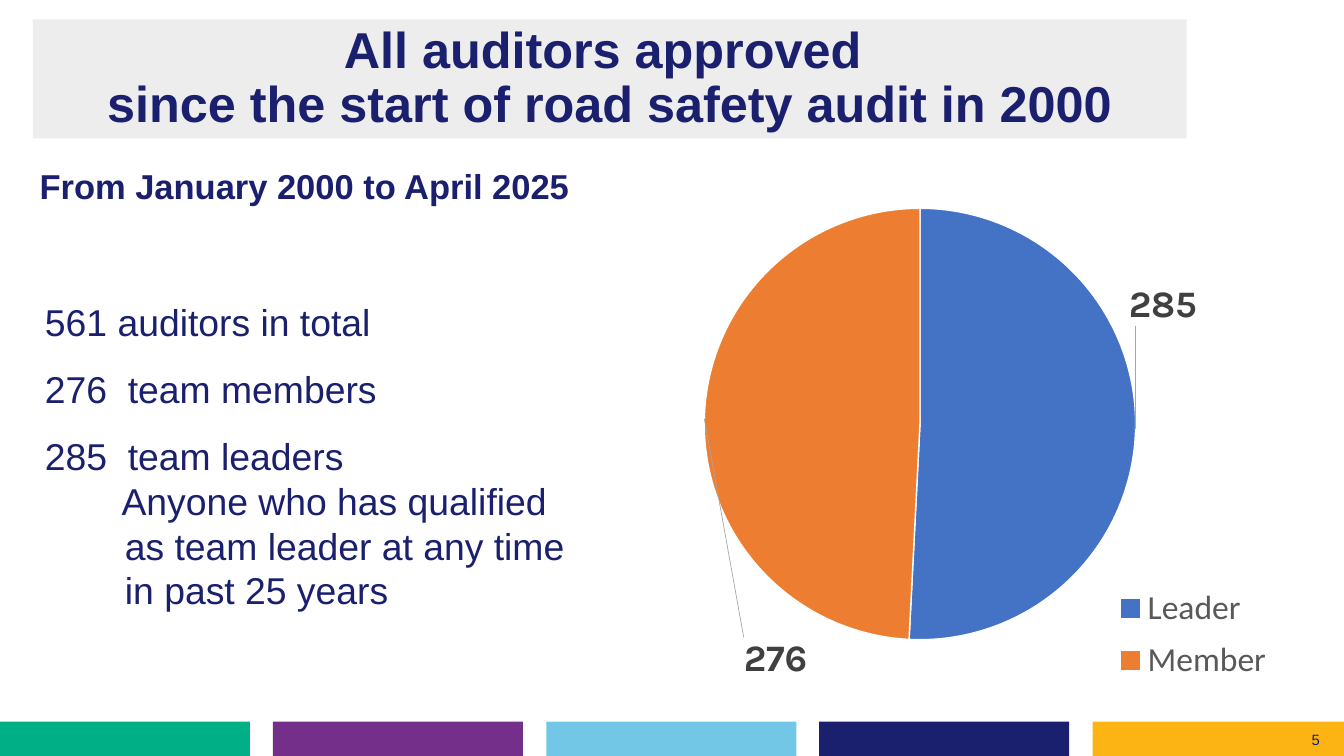
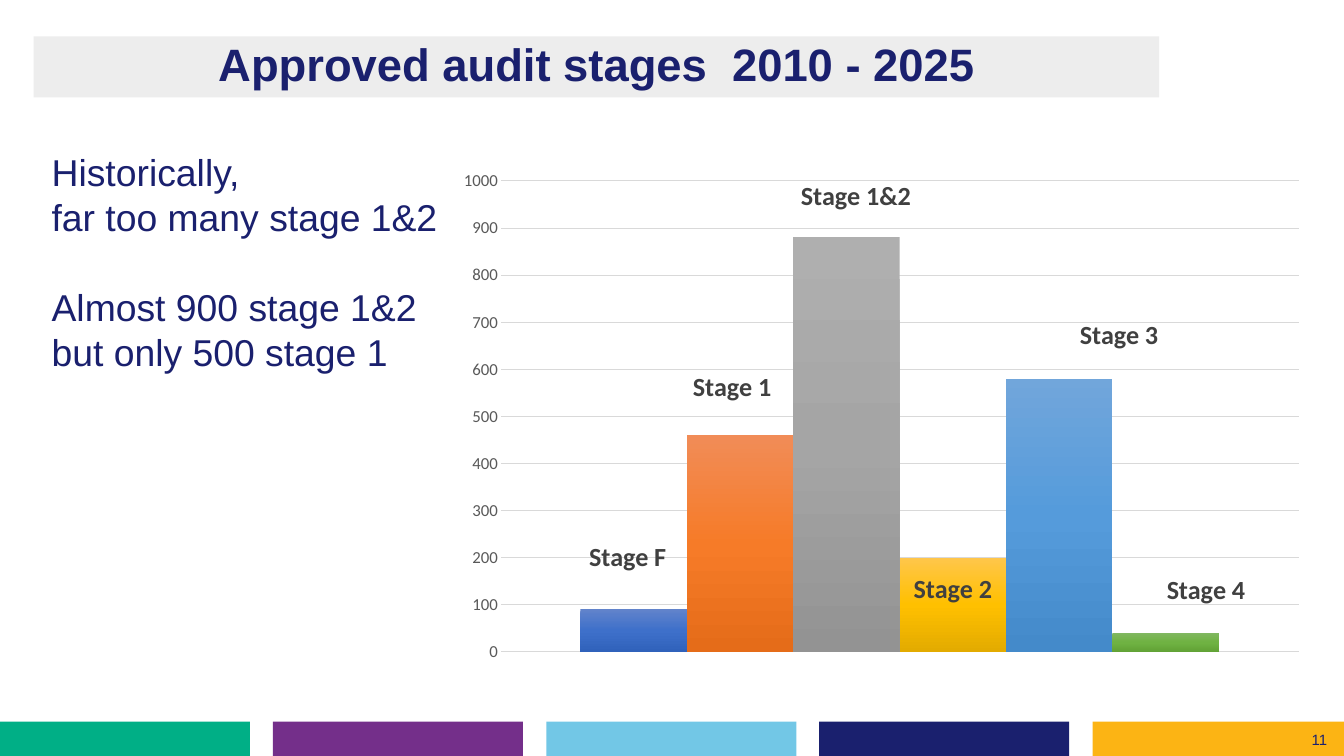
from dataclasses import dataclass

from lxml import etree
from pptx import Presentation
from pptx import util as u
from pptx.chart.data import CategoryChartData
from pptx.dml.color import RGBColor
from pptx.enum import chart as charts, shapes, text
from pptx.oxml.ns import qn

PX = 9144  # EMU per px, 100 px to the inch
SLIDE_BOX = (0, 0, 2000, 1125)


@dataclass(frozen=True)
class Theme:
    navy: str = "1A206E"
    band: str = "EDEDED"
    white: str = "FFFFFF"
    label: str = "404040"
    axis: str = "595959"
    grid: str = "D9D9D9"
    leader: str = "A6A6A6"
    footer: tuple = ("00AF86", "742F8A", "72C7E6", "1A206E", "FCB414")
    slices: tuple = ("4472C4", "ED7D31")
    font: str = "Arial"
    chart_font: str = "Calibri"
    pie_label_font: str = "Karla"
    title_size: float = 54
    short_title_size: float = 48.6
    body_size: float = 40
    subtitle_size: float = 37
    legend_size: float = 36
    pie_label_size: float = 40
    bar_label_size: float = 28
    axis_size: float = 18
    number_size: float = 16


THEME = Theme()

# Stage name, count, gradient from top to bottom, label shift in px
STAGES = [
    ("Stage F", 90, ("6183CB", "3E70CA", "3062BB"), (-9, -49)),
    ("Stage 1", 460, ("F18C57", "F67B28", "E56C19"), (-12, -43)),
    ("Stage 1&2", 880, ("AFAFAF", "A5A5A5", "939393"), (14, -33)),
    ("Stage 2", 200, ("FFC64B", "FFC000", "E3AB00"), (0, 76)),
    ("Stage 3", 580, ("71A6DB", "559BDB", "448ACA"), (89, -36)),
    ("Stage 4", 40, ("81B861", "6FB242", "62A336"), (60, -35)),
]


# Shared helpers
def emu(box):
    return [u.Emu(length * PX) for length in box]


def style_font(font, size, color=THEME.navy, bold=False, name=THEME.font):
    font.name, font.size, font.bold = name, u.Pt(size), bold
    font.color.rgb = RGBColor.from_string(color)


def set_fill(shape, color):
    shape.fill.solid()
    shape.fill.fore_color.rgb = RGBColor.from_string(color)


def set_frame(frame, anchor=text.MSO_ANCHOR.MIDDLE):
    frame.word_wrap = True
    frame.auto_size = text.MSO_AUTO_SIZE.NONE
    frame.vertical_anchor = anchor
    frame.margin_left = frame.margin_right = u.Emu(10 * PX)
    frame.margin_top = frame.margin_bottom = 0


def add_text(slide, box, lines, size, bold=False, spacing=1.0,
             anchor=text.MSO_ANCHOR.MIDDLE):
    frame = slide.shapes.add_textbox(*emu(box)).text_frame
    set_frame(frame, anchor)
    frame.text = "\n".join(lines)
    for paragraph in frame.paragraphs:
        paragraph.line_spacing = spacing
        for run in paragraph.runs:
            style_font(run.font, size, bold=bold)
    return frame.paragraphs


def set_indent(paragraph, left, first):
    properties = paragraph._p.get_or_add_pPr()
    properties.set("marL", str(left * PX))
    properties.set("indent", str(first * PX))


# Parts on every slide
def add_footer(slide, box, number):
    left, top, width, height = box
    strip_top = top + height - 51
    for index, color in enumerate(THEME.footer):
        start = round(index * 406.4)
        strip_width = 372 if index < 4 else width - start
        strip = slide.shapes.add_shape(
            shapes.MSO_SHAPE.RECTANGLE,
            *emu((left + start, strip_top, strip_width, 51)))
        strip.shadow.inherit = False
        set_fill(strip, color)
        strip.line.fill.background()
    add_text(slide, (left + width - 58, strip_top + 8, 54, 38), [number],
             THEME.number_size)


def add_title(slide, box, wording, size):
    title = slide.shapes.title
    title.left, title.top, title.width, title.height = emu(box)
    set_fill(title, THEME.band)
    set_frame(title.text_frame)
    title.text_frame.text = wording
    paragraph = title.text_frame.paragraphs[0]
    paragraph.alignment = text.PP_ALIGN.CENTER
    paragraph.line_spacing = 0.9
    for run in paragraph.runs:
        style_font(run.font, size, bold=True)


def new_slide(presentation, title_box, title, size, number):
    slide = presentation.slides.add_slide(presentation.slide_layouts[5])
    add_footer(slide, SLIDE_BOX, number)
    add_title(slide, title_box, title, size)
    return slide


# Chart helpers
def set_layout(parent, position, values):
    for old in parent.findall(qn("c:layout")):
        parent.remove(old)
    layout = etree.Element(qn("c:layout"))
    manual = etree.SubElement(layout, qn("c:manualLayout"))
    for tag, value in values.items():
        etree.SubElement(manual, qn("c:" + tag)).set("val", str(value))
    parent.insert(position, layout)


def place_part(parent, position, chart_box, part_box, inner=False):
    """Place a plot or legend by px from the corner of its chart."""
    values = {"layoutTarget": "inner"} if inner else {}
    values.update(xMode="edge", yMode="edge")
    sizes = chart_box[2:] * 2
    values.update(zip("xywh", (a / b for a, b in zip(part_box, sizes))))
    set_layout(parent, position, values)


def place_plot(chart, chart_box, plot_box):
    area = chart._chartSpace.find(".//" + qn("c:plotArea"))
    place_part(area, 0, chart_box, plot_box, inner=True)


def add_chart(slide, box, kind, data):
    chart = slide.shapes.add_chart(kind, *emu(box), data).chart
    chart.has_title = False
    chart.has_legend = False
    chart.font.name = THEME.chart_font
    chart.font.size = u.Pt(10)
    return chart


def add_label(series, index, box, shift, size, name, show_series=False):
    label = series.points[index].data_label
    label.position = charts.XL_LABEL_POSITION.OUTSIDE_END
    style_font(label.font, size, THEME.label, True, name)
    element = series._element.findall(".//" + qn("c:dLbl"))[index]
    set_layout(element, 1, {"x": shift[0] / box[2], "y": shift[1] / box[3]})
    element.find(qn("c:showVal")).set("val", str(int(not show_series)))
    element.find(qn("c:showSerName")).set("val", str(int(show_series)))


def set_leader_lines(series, color=None):
    labels = series._element.find(qn("c:dLbls"))
    for old in labels.findall(qn("c:showLeaderLines")):
        labels.remove(old)
    show = etree.SubElement(labels, qn("c:showLeaderLines"))
    show.set("val", "1" if color else "0")
    if color:
        leader = etree.SubElement(labels, qn("c:leaderLines"))
        properties = etree.SubElement(leader, qn("c:spPr"))
        line = etree.SubElement(properties, qn("a:ln"), w=str(u.Pt(0.75)))
        fill = etree.SubElement(line, qn("a:solidFill"))
        etree.SubElement(fill, qn("a:srgbClr"), val=color)


def set_gradient(series, colors):
    fill = series.format.fill
    fill.gradient()
    fill.gradient_angle = 270
    stops = series._element.find(".//" + qn("a:gsLst"))
    for stop in list(stops):
        stops.remove(stop)
    for index, color in enumerate(colors):
        stop = etree.SubElement(stops, qn("a:gs"), pos=str(index * 50000))
        etree.SubElement(stop, qn("a:srgbClr"), val=color)


def add_role_pie(slide, box):
    data = CategoryChartData()
    data.categories = ["Leader", "Member"]
    data.add_series("Series 1", (285, 276))
    chart = add_chart(slide, box, charts.XL_CHART_TYPE.PIE, data)
    plot = chart.plots[0]
    plot.vary_by_categories = True
    series = plot.series[0]
    for index, shift in enumerate([(-16, -186), (159, 358)]):
        point = series.points[index]
        set_fill(point.format, THEME.slices[index])
        point.format.line.color.rgb = RGBColor.from_string(THEME.white)
        point.format.line.width = u.Pt(1.5)
        add_label(series, index, box, shift, THEME.pie_label_size,
                  THEME.pie_label_font)
    set_leader_lines(series, THEME.leader)
    place_plot(chart, box, (246, 14, 642, 642))
    # Legend at the lower right
    chart.has_legend = True
    legend = chart.legend
    legend.position = charts.XL_LEGEND_POSITION.BOTTOM
    legend.include_in_layout = False
    style_font(legend.font, THEME.legend_size, THEME.axis,
               name=THEME.chart_font)
    place_part(legend._element, 1, box, (842, 563, 263, 170))


def add_stage_columns(slide, box):
    data = CategoryChartData()
    data.categories = ["1"]
    for name, count, _, _ in STAGES:
        data.add_series(name, (count,))
    chart = add_chart(slide, box, charts.XL_CHART_TYPE.COLUMN_CLUSTERED, data)
    plot = chart.plots[0]
    plot.vary_by_categories = False
    plot.gap_width, plot.overlap = 150, 0
    for series, (_, _, colors, shift) in zip(plot.series, STAGES):
        set_gradient(series, colors)
        add_label(series, 0, box, shift, THEME.bar_label_size,
                  THEME.chart_font, show_series=True)
        set_leader_lines(series)
    place_plot(chart, box, (70, 40, 1188, 701))
    # Axes
    chart.category_axis.visible = False
    axis = chart.value_axis
    axis.minimum_scale, axis.maximum_scale, axis.major_unit = 0, 1000, 100
    axis.major_tick_mark = charts.XL_TICK_MARK.NONE
    axis.format.line.fill.background()
    axis.has_major_gridlines = True
    grid_line = axis.major_gridlines.format.line
    grid_line.color.rgb = RGBColor.from_string(THEME.grid)
    grid_line.width = u.Pt(0.75)
    style_font(axis.tick_labels.font, THEME.axis_size, THEME.axis,
               name=THEME.chart_font)


# Slides
def add_auditors_slide(presentation):
    slide = new_slide(
        presentation, (49, 29, 1717, 177),
        "All auditors approved \vsince the start of road safety audit in 2000",
        THEME.title_size, "5")
    add_role_pie(slide, (802, 296, 1142, 758))
    paragraphs = add_text(slide, (57, 353, 817, 617), [
        "561 auditors in total",
        "276  team members",
        "285  team leaders",
        "Anyone who has qualified as team leader at any time in past 25 years",
    ], THEME.body_size, spacing=1.5)
    set_indent(paragraphs[2], 79, -79)
    set_indent(paragraphs[3], 119, -5)
    paragraphs[3].line_spacing = 1.0
    add_text(slide, (49, 218, 1758, 91), ["From January 2000 to April 2025"],
             THEME.subtitle_size, bold=True, spacing=1.4)


def add_stages_slide(presentation):
    slide = new_slide(presentation, (50, 54, 1675, 91),
                      "Approved audit stages  2010 - 2025",
                      THEME.short_title_size, "11")
    add_stage_columns(slide, (675, 229, 1258, 758))
    paragraphs = add_text(slide, (67, 222, 767, 427), [
        "Historically,",
        "far too many stage 1&2",
        "Almost 900 stage 1&2",
        "but only 500 stage 1",
    ], THEME.body_size, anchor=text.MSO_ANCHOR.TOP)
    paragraphs[2].space_before = u.Pt(49)


def main():
    presentation = Presentation()
    presentation.slide_width, presentation.slide_height = emu(SLIDE_BOX[2:])
    add_auditors_slide(presentation)
    add_stages_slide(presentation)
    presentation.save("out.pptx")


if __name__ == "__main__":
    main()
